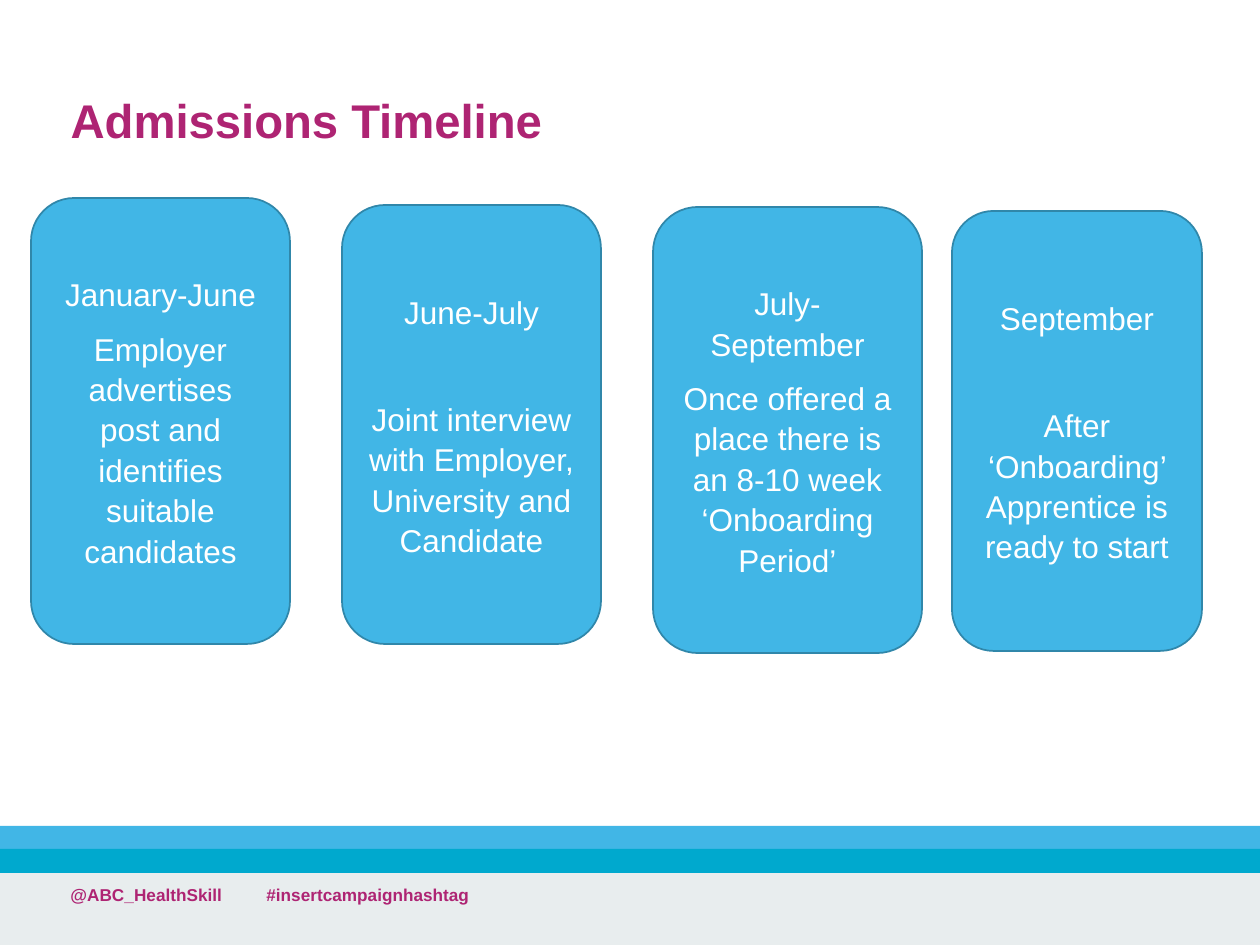
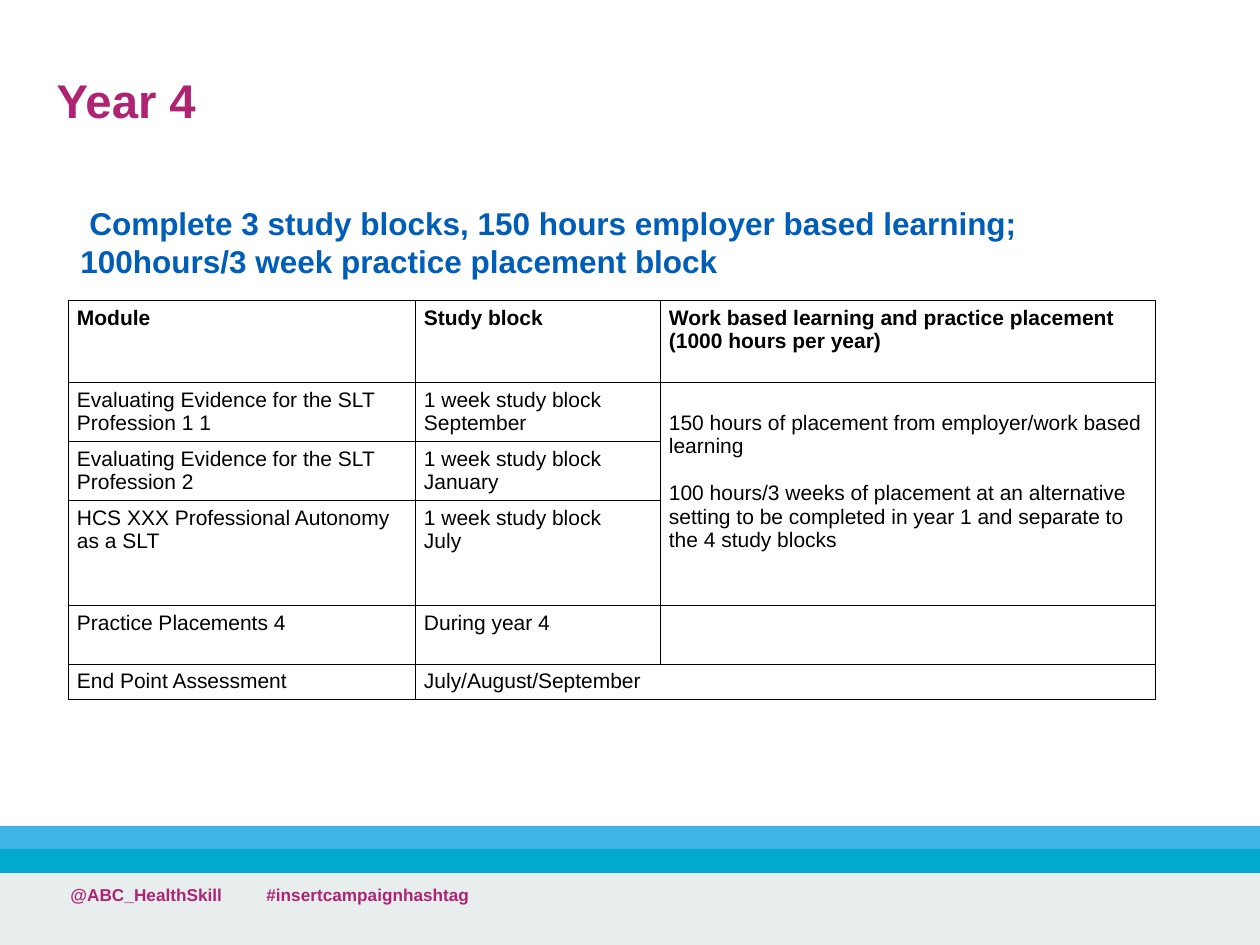
from dataclasses import dataclass

from lxml.etree import SubElement
from pptx import Presentation
from pptx.dml.color import RGBColor
from pptx.enum.shapes import MSO_SHAPE
from pptx.enum.text import MSO_ANCHOR, MSO_AUTO_SIZE, PP_ALIGN
from pptx.oxml import parse_xml
from pptx.oxml.ns import nsdecls, qn
from pptx.util import Pt

EMU_PER_PX = 914400 / 126
SLIDE_WIDTH, SLIDE_HEIGHT = 1260, 945
TITLE_ONLY_LAYOUT = 5


@dataclass(frozen=True)
class Theme:
    """Colours, font and type sizes shared by the slides."""

    font: str = "Arial"
    magenta: str = "AE2473"
    sky: str = "41B6E6"
    teal: str = "00A9CE"
    mist: str = "E8EDEE"
    outline: str = "3087AA"
    blue: str = "005EB8"
    white: str = "FFFFFF"
    black: str = "000000"
    title_size: float = 27
    text_size: float = 18
    table_size: float = 12
    footer_size: float = 9.8


THEME = Theme()

BANDS = [
    (873, 72, THEME.mist),
    (826, 24, THEME.sky),
    (849, 24, THEME.teal),
]

TIMELINE_CARDS = [
    ((31, 198, 259, 446), 8, "January-June",
     "Employer advertises post and identifies suitable candidates"),
    ((342, 205, 259, 439), 38, "June-July",
     "Joint interview with Employer, University and Candidate"),
    ((653, 207, 269, 446), 8, "July-September",
     "Once offered a place there is an 8-10 week ‘Onboarding Period’"),
    ((952, 211, 250, 440), 38, "September",
     "After ‘Onboarding’ Apprentice is ready to start"),
]

MODULE_COLUMNS = [347, 245, 495]
MODULE_ROWS = [82, 59, 59, 105, 59, 35]
MODULE_CELLS = [
    ["Module", "Study block",
     "Work based learning and practice placement (1000 hours per year)"],
    ["Evaluating Evidence for the SLT Profession 1 1",
     "1 week study block\nSeptember",
     "150 hours of placement from employer/work based learning\n"
     "100 hours/3 weeks of placement at an alternative setting to be "
     "completed in year 1 and separate to the 4 study blocks"],
    ["Evaluating Evidence for the SLT Profession 2",
     "1 week study block\nJanuary", ""],
    ["HCS XXX Professional Autonomy as a SLT",
     "1 week study block\nJuly", ""],
    ["Practice Placements 4", "During year 4", ""],
    ["End Point Assessment", "July/August/September", ""],
]


def px(length):
    """Turn pixels into EMU."""
    return round(length * EMU_PER_PX)


def box(left, top, width, height):
    """Turn a pixel rectangle into EMU."""
    return px(left), px(top), px(width), px(height)


def format_text(text_frame, size, color, bold=False):
    """Apply the theme font to every run."""
    for paragraph in text_frame.paragraphs:
        for run in paragraph.runs:
            run.font.name = THEME.font
            run.font.size = Pt(size)
            run.font.bold = bold
            run.font.color.rgb = RGBColor.from_string(color)


def add_filled_shape(slide, kind, area, fill, line=None):
    """Add a flat preset shape with an optional outline."""
    shape = slide.shapes.add_shape(kind, *box(*area))
    shape.shadow.inherit = False
    shape.fill.solid()
    shape.fill.fore_color.rgb = RGBColor.from_string(fill)
    if line:
        shape.line.color.rgb = RGBColor.from_string(line)
        shape.line.width = Pt(1)
    else:
        shape.line.fill.background()
    return shape


def add_text_box(slide, area, text, size, color):
    """Add a wrapping bold text box."""
    shape = slide.shapes.add_textbox(*box(*area))
    shape.text_frame.word_wrap = True
    shape.text_frame.text = text
    format_text(shape.text_frame, size, color, bold=True)
    return shape


def move_footer_to_layout(slide):
    """Build the bands and footer line once and place them on the layout."""
    shapes = [
        add_filled_shape(slide, MSO_SHAPE.RECTANGLE,
                         (0, top, SLIDE_WIDTH, height), color)
        for top, height, color in BANDS
    ]
    footer = add_text_box(slide, (58, 878, 736, 67),
                          "@ABC_HealthSkill\t#insertcampaignhashtag",
                          THEME.footer_size, THEME.magenta)
    properties = footer.text_frame.paragraphs[0]._p.get_or_add_pPr()
    tab_list = SubElement(properties, qn("a:tabLst"))
    SubElement(tab_list, qn("a:tab"), pos=str(px(196)), algn="l")
    for shape in shapes + [footer]:
        slide.slide_layout.shapes.element.append(shape.element)


def set_title(slide, text, area):
    """Place and format the title placeholder."""
    title = slide.shapes.title
    title.left, title.top, title.width, title.height = box(*area)
    text_frame = title.text_frame
    text_frame.text = text
    text_frame.auto_size = MSO_AUTO_SIZE.NONE
    text_frame.vertical_anchor = MSO_ANCHOR.MIDDLE
    text_frame.paragraphs[0].alignment = PP_ALIGN.LEFT
    text_frame.paragraphs[0].line_spacing = 0.9
    format_text(text_frame, THEME.title_size, THEME.magenta, bold=True)


def add_card(slide, area, gap, period, activity):
    """Add a rounded card with a period above its activity."""
    card = add_filled_shape(slide, MSO_SHAPE.ROUNDED_RECTANGLE, area,
                            THEME.sky, THEME.outline)
    text_frame = card.text_frame
    text_frame.word_wrap = True
    text_frame.vertical_anchor = MSO_ANCHOR.MIDDLE
    text_frame.text = f"{period}\n{activity}"
    for paragraph, space_after in zip(text_frame.paragraphs, (gap, 8)):
        paragraph.alignment = PP_ALIGN.CENTER
        paragraph.line_spacing = 1.07
        paragraph.space_after = Pt(space_after)
    format_text(text_frame, THEME.text_size, THEME.white)


def set_borders(cell):
    """Draw a thin black line on all four sides of a cell."""
    properties = cell._tc.get_or_add_tcPr()
    for index, side in enumerate("LRTB"):
        properties.insert(index, parse_xml(
            f'<a:ln{side} {nsdecls("a")} w="{Pt(0.5)}"><a:solidFill>'
            f'<a:srgbClr val="{THEME.black}"/></a:solidFill></a:ln{side}>'))


def fill_cell(cell, text, bold):
    """Write and format one table cell."""
    cell.margin_left = cell.margin_right = px(9)
    cell.margin_top = cell.margin_bottom = px(6)
    cell.fill.background()
    set_borders(cell)
    if text:
        cell.text_frame.text = text
        format_text(cell.text_frame, THEME.table_size, THEME.black, bold)


def add_module_table(slide, left, top):
    """Add the module table with its merged placement cells."""
    frame = slide.shapes.add_table(
        len(MODULE_ROWS), len(MODULE_COLUMNS),
        *box(left, top, sum(MODULE_COLUMNS), sum(MODULE_ROWS)))
    table = frame.table
    table.first_row = table.horz_banding = False
    for column, width in zip(table.columns, MODULE_COLUMNS):
        column.width = px(width)
    for row, height in zip(table.rows, MODULE_ROWS):
        row.height = px(height)
    for row_index, texts in enumerate(MODULE_CELLS):
        for column_index, text in enumerate(texts):
            fill_cell(table.cell(row_index, column_index), text,
                      bold=row_index == 0)
    placement = table.cell(1, 2)
    placement.merge(table.cell(3, 2))
    placement.margin_top = px(29)
    placement.text_frame.paragraphs[1].space_before = Pt(13.5)
    table.cell(5, 1).merge(table.cell(5, 2))


def build_timeline(slide):
    """Fill the admissions timeline slide."""
    set_title(slide, "Admissions Timeline", (58, 32, 1086, 183))
    for card in TIMELINE_CARDS:
        add_card(slide, *card)


def build_year_four(slide):
    """Fill the year 4 slide."""
    set_title(slide, "Year 4", (44, 64, 1086, 78))
    add_module_table(slide, 68, 300)
    summary = add_text_box(
        slide, (68, 198, 1056, 89),
        "Complete 3 study blocks, 150 hours employer based learning; "
        "100hours/3 week practice placement block",
        THEME.text_size, THEME.blue)
    properties = summary.text_frame.paragraphs[0]._p.get_or_add_pPr()
    properties.set("indent", str(px(9)))


def main():
    """Build and save the presentation."""
    presentation = Presentation()
    presentation.slide_width = px(SLIDE_WIDTH)
    presentation.slide_height = px(SLIDE_HEIGHT)
    layout = presentation.slide_layouts[TITLE_ONLY_LAYOUT]
    timeline, year_four = [presentation.slides.add_slide(layout)
                           for _ in range(2)]
    move_footer_to_layout(timeline)
    build_timeline(timeline)
    build_year_four(year_four)
    presentation.save("out.pptx")


if __name__ == "__main__":
    main()
